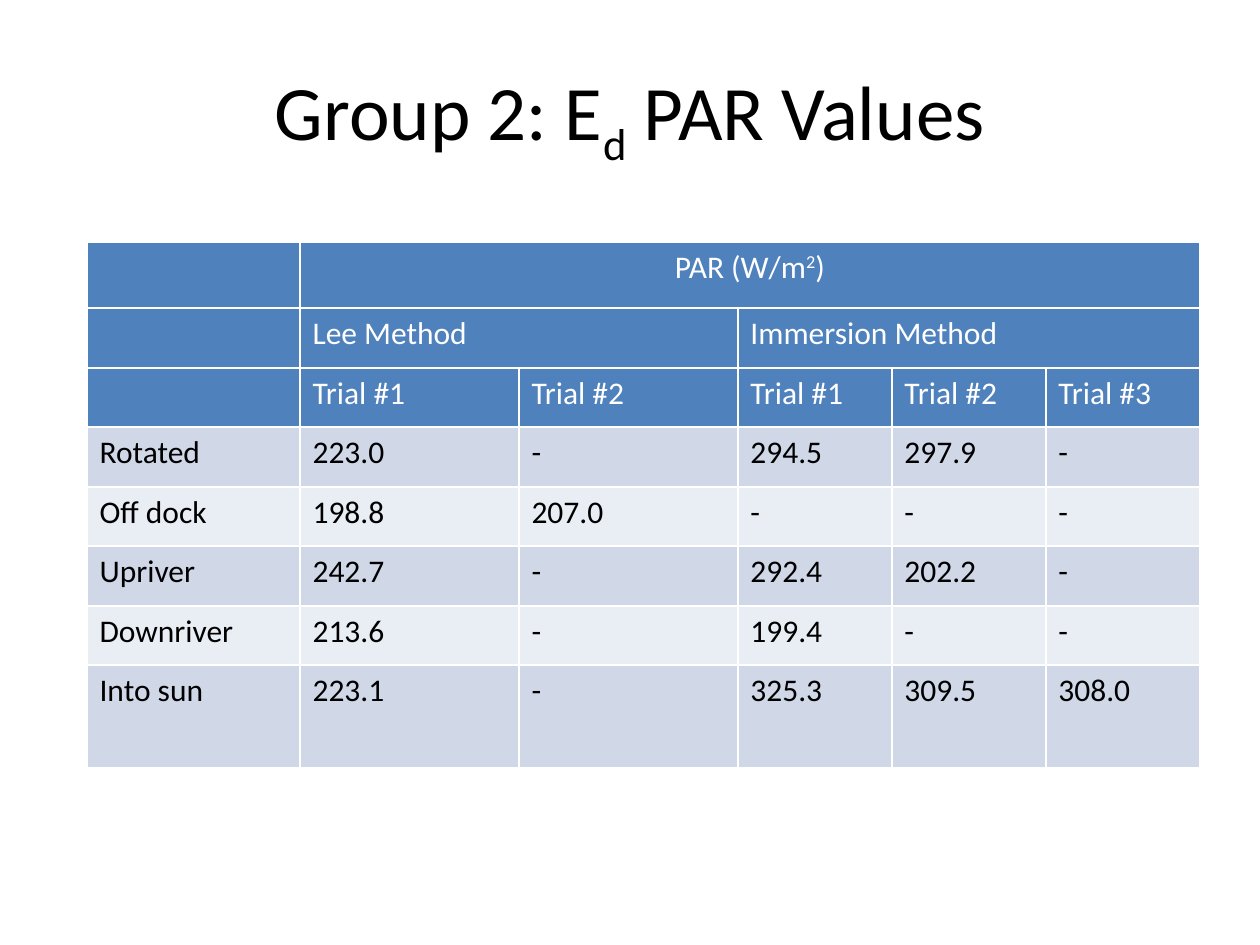
"""Build a slide with a table of PAR values by method and trial."""
from lxml.etree import SubElement
from pptx import Presentation
from pptx.dml.color import RGBColor
from pptx.enum.text import MSO_ANCHOR as Anchor, PP_ALIGN as Align
from pptx.oxml.ns import qn
from pptx.util import Pt

SCALE = 914400 / 126
HEADER, BANDS = "4F81BD", ("D0D8E8", "E9EDF4")
WHITE, BLACK = "FFFFFF", "000000"
HEADER_ROWS = 3
COLUMN_WIDTHS = [213, 219, 219, 154, 154, 154]
ROW_HEIGHTS = [66, *[60, 59] * 3, 103]
UNIT = [("PAR (W/m", 0), ("2", 30), (")", 0)]
ROWS = [
    ["", UNIT, "", "", "", ""],
    ["", "Lee Method", "", "Immersion Method", "", ""],
    ["", "Trial #1", "Trial #2", "Trial #1", "Trial #2", "Trial #3"],
    ["Rotated", "223.0", "-", "294.5", "297.9", "-"],
    ["Off dock", "198.8", "207.0", "-", "-", "-"],
    ["Upriver", "242.7", "-", "292.4", "202.2", "-"],
    ["Downriver", "213.6", "-", "199.4", "-", "-"],
    ["Into sun", "223.1", "-", "325.3", "309.5", "308.0"],
]
MERGES = [(0, 1, 5), (1, 1, 2), (1, 3, 5)]


def px(length):
    return round(length * SCALE)


def write(para, content, size, color):
    spans = [(content, 0)] if isinstance(content, str) else content
    para.font.size = Pt(size)
    for text, baseline in spans:
        span = para.add_run()
        span.text = text
        span.font.color.rgb = RGBColor.from_string(color)
        for name, value in {"name": "Calibri", "size": Pt(size), "bold": False}.items():
            setattr(span.font, name, value)
        if baseline:
            span.font._element.set("baseline", str(baseline * 1000))


deck = Presentation()
deck.slide_width, deck.slide_height = px(1260), px(945)
page = deck.slides.add_slide(deck.slide_layouts[5])

title = page.shapes.title
for name, value in {"left": 63, "top": 38, "width": 1134, "height": 157}.items():
    setattr(title, name, px(value))
title.text_frame.vertical_anchor = Anchor.MIDDLE
heading = title.text_frame.paragraphs[0]
heading.alignment = Align.CENTER
write(heading, [("Group 2: E", 0), ("d", -25), (" PAR Values", 0)], 44, BLACK)

frame = page.shapes.add_table(
    len(ROWS), len(COLUMN_WIDTHS), px(87), px(242), px(sum(COLUMN_WIDTHS)), px(sum(ROW_HEIGHTS))
)
table = frame.table
for column, width in zip(table.columns, COLUMN_WIDTHS):
    column.width = px(width)
for row, height in zip(table.rows, ROW_HEIGHTS):
    row.height = px(height)

for r, row in enumerate(ROWS):
    is_header = r < HEADER_ROWS
    fill = HEADER if is_header else BANDS[(r - HEADER_ROWS) % 2]
    for c, content in enumerate(row):
        cell = table.cell(r, c)
        properties = cell._tc.get_or_add_tcPr()
        for side in ("lnL", "lnR", "lnT", "lnB"):
            line = SubElement(properties, qn(f"a:{side}"), w=str(Pt(1)))
            SubElement(SubElement(line, qn("a:solidFill")), qn("a:srgbClr"), val=WHITE)
        cell.fill.solid()
        cell.fill.fore_color.rgb = RGBColor.from_string(fill)
        if content:
            write(cell.text_frame.paragraphs[0], content, 18, WHITE if is_header else BLACK)

for r, first, last in MERGES:
    table.cell(r, first).merge(table.cell(r, last))
table.cell(0, 1).text_frame.paragraphs[0].alignment = Align.CENTER

deck.save("out.pptx")
